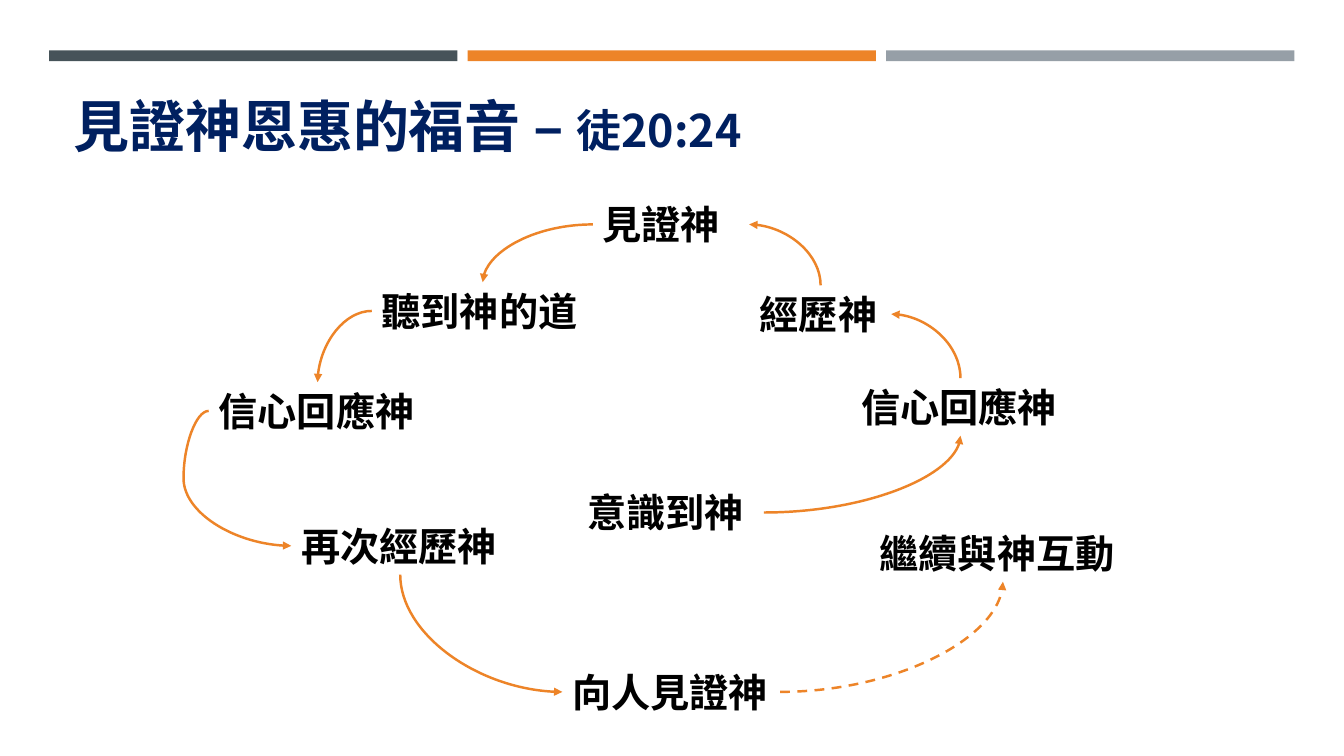
from lxml import etree
from pptx import Presentation
from pptx.dml.color import RGBColor
from pptx.enum import dml, shapes, text
from pptx.oxml.ns import qn
from pptx.util import Cm, Pt

COLORS = {
    "slate": "465359",
    "orange": "ED8428",
    "grey": "969FA7",
    "navy": "002060",
    "black": "000000",
}
FONT = "Noto Sans CJK TC"
TOP, LEFT, BOTTOM, RIGHT = range(4)
LABEL_HEIGHT = 1.45

# name: (wording, left, top, width), relative to the cycle's box
LABELS = {
    "aware": ("意識到神", 9.29, 7.26, 4.7),
    "respond": ("信心回應神", 16.2, 4.6, 5.49),
    "experience": ("經歷神", 13.64, 2.26, 3.56),
    "witness": ("見證神", 9.68, 0, 3.94),
    "hear": ("聽到神的道", 4.11, 2.18, 5.59),
    "respond again": ("信心回應神", 0, 4.7, 5.49),
    "experience again": ("再次經歷神", 2.08, 8.1, 5.49),
    "tell others": ("向人見證神", 8.91, 11.78, 5.49),
    "continue": ("繼續與神互動", 16.66, 8.28, 6.71),
}
ARROWS = [
    ("aware", RIGHT, "respond", BOTTOM),
    ("respond", TOP, "experience", RIGHT),
    ("experience", TOP, "witness", RIGHT),
    ("witness", LEFT, "hear", TOP),
    ("hear", LEFT, "respond again", TOP),
    ("respond again", LEFT, "experience again", LEFT),
    ("experience again", BOTTOM, "tell others", LEFT),
    ("tell others", RIGHT, "continue", BOTTOM),
]


def rgb(name):
    return RGBColor.from_string(COLORS[name])


def style(font, size, color):
    font.size = Pt(size)
    font.bold = True
    font.color.rgb = rgb(color)
    font.name = FONT
    etree.SubElement(font._rPr, qn("a:ea"), typeface=FONT)


def add_bars(page, left, top, width, height, gap=0.26):
    names = ("slate", "orange", "grey")
    bar_width = (width - gap * (len(names) - 1)) / len(names)
    for index, name in enumerate(names):
        bar = page.shapes.add_shape(
            shapes.MSO_SHAPE.RECTANGLE, Cm(left + index * (bar_width + gap)),
            Cm(top), Cm(bar_width), Cm(height))
        bar.shadow.inherit = False
        bar.fill.solid()
        bar.fill.fore_color.rgb = rgb(name)
        bar.line.fill.background()


def add_title(page, left, top, width, height):
    box = page.shapes.add_textbox(Cm(left), Cm(top), Cm(width), Cm(height))
    frame = box.text_frame
    frame.word_wrap = True
    frame.vertical_anchor = text.MSO_ANCHOR.BOTTOM
    para = frame.paragraphs[0]
    para.line_spacing = 0.9
    for wording, size in (("見證神恩惠的福音 – ", 40), ("徒20:24", 32)):
        span = para.add_run()
        span.text = wording
        style(span.font, size, "navy")


def add_label(page, wording, left, top, width):
    box = page.shapes.add_textbox(Cm(left), Cm(top), Cm(width), Cm(LABEL_HEIGHT))
    box.text_frame.word_wrap = True
    para = box.text_frame.paragraphs[0]
    para.text = wording
    style(para.font, 28, "black")
    return box


def bend(arrow, start_side, end_side):
    """Give the arrow a C curve between like sides, else a quarter curve."""
    properties = arrow.element.spPr
    geometry = properties.find(qn("a:prstGeom"))
    if start_side == end_side:
        guides = geometry.find(qn("a:avLst"))
        if guides is None:
            guides = etree.SubElement(geometry, qn("a:avLst"))
        etree.SubElement(guides, qn("a:gd"), name="adj1", fmla="val -30500")
        return
    geometry.set("prst", "curvedConnector2")
    if start_side in (TOP, BOTTOM):
        # A quarter curve leaves sideways, so turn it about its centre.
        goes_left = arrow.end_x < arrow.begin_x
        goes_down = arrow.end_y > arrow.begin_y
        left, top, width, height = arrow.left, arrow.top, arrow.width, arrow.height
        arrow.left = left + (width - height) // 2
        arrow.top = top + (height - width) // 2
        arrow.width, arrow.height = height, width
        frame = properties.xfrm
        frame.rot, frame.flipH, frame.flipV = 270, goes_down, goes_left


def add_arrow(page, start, start_side, end, end_side):
    arrow = page.shapes.add_connector(shapes.MSO_CONNECTOR.CURVE, 0, 0, 0, 0)
    arrow.begin_connect(start, start_side)
    arrow.end_connect(end, end_side)
    bend(arrow, start_side, end_side)
    arrow.line.color.rgb = rgb("orange")
    arrow.line.width = Pt(1.75)
    etree.SubElement(arrow.line._get_or_add_ln(), qn("a:tailEnd"), type="triangle")
    etree.SubElement(arrow.element.spPr, qn("a:effectLst"))
    return arrow


def add_cycle(page, left, top):
    boxes = {
        name: add_label(page, wording, left + x, top + y, width)
        for name, (wording, x, y, width) in LABELS.items()
    }
    for start, start_side, end, end_side in ARROWS:
        arrow = add_arrow(page, boxes[start], start_side, boxes[end], end_side)
    arrow.line.dash_style = dml.MSO_LINE.DASH


def main():
    deck = Presentation()
    deck.slide_width, deck.slide_height = Cm(33.87), Cm(19.05)
    page = deck.slides.add_slide(deck.slide_layouts[6])
    add_bars(page, left=1.24, top=1.27, width=31.38, height=0.27)
    add_title(page, left=1.6, top=2.03, width=30.63, height=2.11)
    add_cycle(page, left=5.26, top=4.93)
    deck.save("out.pptx")


if __name__ == "__main__":
    main()
